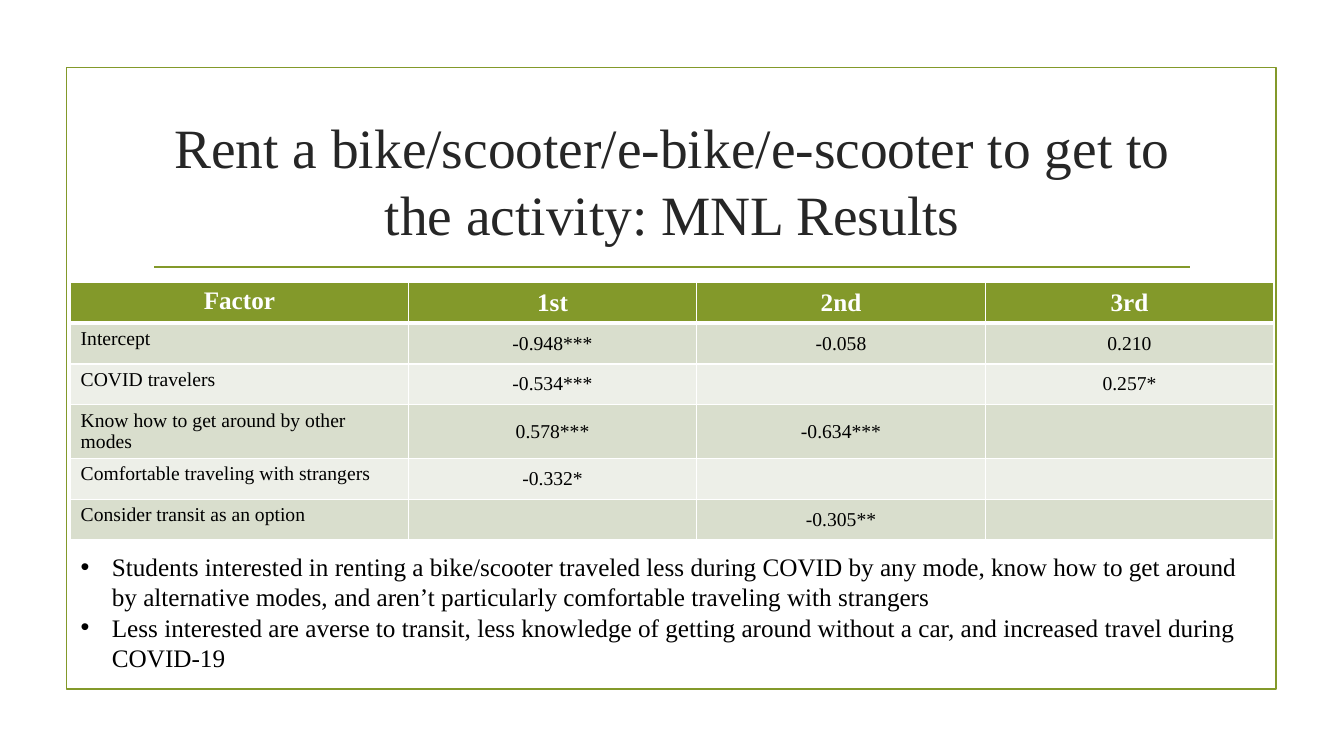
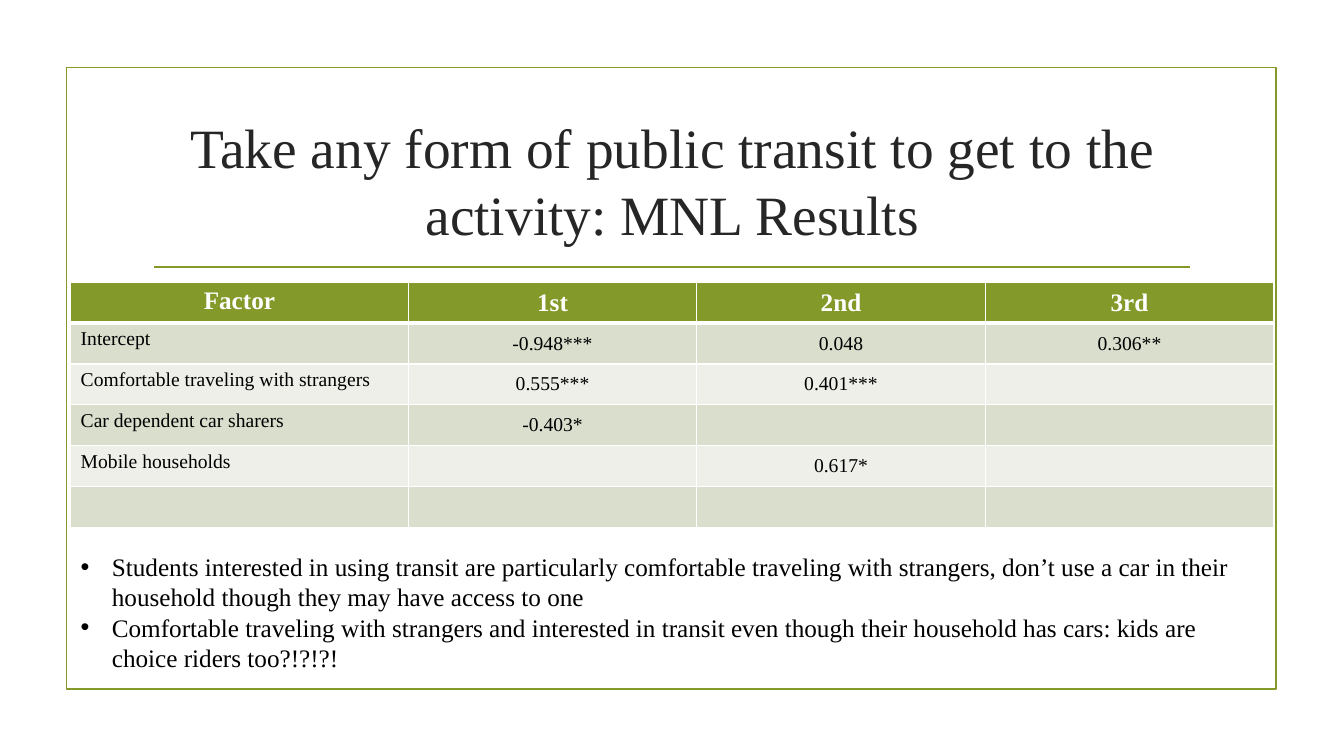
"""Build two slides of MNL results, each with a factor table and takeaways."""
from lxml import etree
from pptx import Presentation
from pptx.dml.color import RGBColor
from pptx.enum import shapes, text
from pptx.oxml import ns
from pptx.util import Cm, Pt

FONT = "Times New Roman"
GREEN = RGBColor(0x83, 0x99, 0x2A)
INK = RGBColor(0x26, 0x26, 0x26)
BLACK = RGBColor(0, 0, 0)
WHITE = RGBColor(0xFF, 0xFF, 0xFF)
BANDS = (RGBColor(0xD9, 0xDE, 0xCD), RGBColor(0xED, 0xEF, 0xE8))

FRAME = (Cm(1.68), Cm(1.7), Cm(30.48), Cm(15.67))
RULE = (Cm(3.89), Cm(6.73), Cm(30), Cm(6.73))
TITLE = (Cm(3.61), Cm(2.72), Cm(26.67), Cm(3.63))
LEFT, TABLE_TOP, NOTES_TOP = Cm(1.78), Cm(7.11), Cm(13.77)
COLUMNS = (Cm(8.51), Cm(7.27), Cm(7.27), Cm(7.27))
ROW_HEIGHT, NOTES_HEIGHT, INDENT = Cm(1.03), Cm(3.33), Cm(0.79)

HEADER = ("Factor", "1st", "2nd", "3rd")
SLIDES = [
    {
        "title": "Rent a bike/scooter/e-bike/e-scooter to get to the activity: MNL Results",
        "rows": [
            ("Intercept", "-0.948***", "-0.058", "0.210"),
            ("COVID travelers", "-0.534***", "", "0.257*"),
            ("Know how to get around by other modes", "0.578***", "-0.634***", ""),
            ("Comfortable traveling with strangers", "-0.332*", "", ""),
            ("Consider transit as an option", "", "-0.305**", ""),
        ],
        "takeaways": [
            "Students interested in renting a bike/scooter traveled less during COVID by any mode, "
            "know how to get around by alternative modes, and aren’t particularly comfortable "
            "traveling with strangers",
            "Less interested are averse to transit, less knowledge of getting around without a car, "
            "and increased travel during COVID-19",
        ],
    },
    {
        "title": "Take any form of public transit to get to the activity: MNL Results",
        "rows": [
            ("Intercept", "-0.948***", "0.048", "0.306**"),
            ("Comfortable traveling with strangers", "0.555***", "0.401***", ""),
            ("Car dependent car sharers", "-0.403*", "", ""),
            ("Mobile households", "", "0.617*", ""),
            ("", "", "", ""),
        ],
        "takeaways": [
            "Students interested in using transit are particularly comfortable traveling with "
            "strangers, don’t use a car in their household though they may have access to one",
            "Comfortable traveling with strangers and interested in transit even though their "
            "household has cars: kids are choice riders too?!?!?!",
        ],
    },
]


def style(font, size, color, bold=False):
    font.name, font.size, font.bold = FONT, Pt(size), bold
    font.color.rgb = color


def write(paragraph, wording, size, color, bold=False):
    run = paragraph.add_run()
    run.text = wording
    style(run.font, size, color, bold)


def add_title(slide, wording):
    title = slide.shapes.title
    title.left, title.top, title.width, title.height = TITLE
    frame = title.text_frame
    frame.auto_size = text.MSO_AUTO_SIZE.NONE
    frame.word_wrap = True
    frame.vertical_anchor = text.MSO_ANCHOR.MIDDLE
    frame.paragraphs[0].alignment = text.PP_ALIGN.CENTER
    write(frame.paragraphs[0], wording, 39.6, INK)


def add_frame(slide):
    border = slide.shapes.add_shape(shapes.MSO_SHAPE.RECTANGLE, *FRAME)
    border.shadow.inherit = False
    border.fill.background()
    rule = slide.shapes.add_connector(shapes.MSO_CONNECTOR.STRAIGHT, *RULE)
    etree.SubElement(rule._element.spPr, ns.qn("a:effectLst"))
    for shape in (border, rule):
        shape.line.color.rgb = GREEN
        shape.line.width = Pt(1.25)


def set_borders(cell, widths):
    properties = cell._tc.get_or_add_tcPr()
    for index, (side, width) in enumerate(widths.items()):
        line = etree.Element(ns.qn(f"a:ln{side}"), w=str(Pt(width)))
        fill = etree.SubElement(line, ns.qn("a:solidFill"))
        etree.SubElement(fill, ns.qn("a:srgbClr"), val=str(WHITE))
        properties.insert(index, line)


def add_results(slide, rows):
    rows = [HEADER, *rows]
    table = slide.shapes.add_table(len(rows), len(COLUMNS), LEFT, TABLE_TOP,
                                   sum(COLUMNS), ROW_HEIGHT * len(rows)).table
    for column, width in zip(table.columns, COLUMNS):
        column.width = width
    for r, row in enumerate(rows):
        table.rows[r].height = ROW_HEIGHT
        header = r == 0
        size, color = (18, WHITE) if header else (14, BLACK)
        for c, wording in enumerate(row):
            cell = table.cell(r, c)
            cell.fill.solid()
            cell.fill.fore_color.rgb = GREEN if header else BANDS[(r - 1) % 2]
            set_borders(cell, {"L": 1, "R": 1, "T": 3 if r == 1 else 1, "B": 3 if header else 1})
            cell.vertical_anchor = text.MSO_ANCHOR.MIDDLE if c else text.MSO_ANCHOR.TOP
            paragraph = cell.text_frame.paragraphs[0]
            paragraph.alignment = text.PP_ALIGN.CENTER if header or c else text.PP_ALIGN.LEFT
            if wording:
                write(paragraph, wording, size, color, header)
            else:
                style(paragraph.font, size, color)


def add_takeaways(slide, takeaways):
    box = slide.shapes.add_textbox(LEFT, NOTES_TOP, sum(COLUMNS), NOTES_HEIGHT)
    frame = box.text_frame
    frame.word_wrap = True
    for index, wording in enumerate(takeaways):
        paragraph = frame.add_paragraph() if index else frame.paragraphs[0]
        properties = paragraph._p.get_or_add_pPr()
        properties.set("marL", str(INDENT))
        properties.set("indent", str(-INDENT))
        etree.SubElement(properties, ns.qn("a:buFont"), typeface="Arial")
        etree.SubElement(properties, ns.qn("a:buChar"), char="•")
        write(paragraph, wording, 18, BLACK)


def main():
    presentation = Presentation()
    presentation.slide_width, presentation.slide_height = Cm(33.87), Cm(19.05)
    for content in SLIDES:
        slide = presentation.slides.add_slide(presentation.slide_layouts[5])
        add_frame(slide)
        add_title(slide, content["title"])
        add_results(slide, content["rows"])
        add_takeaways(slide, content["takeaways"])
    presentation.save("out.pptx")


if __name__ == "__main__":
    main()
